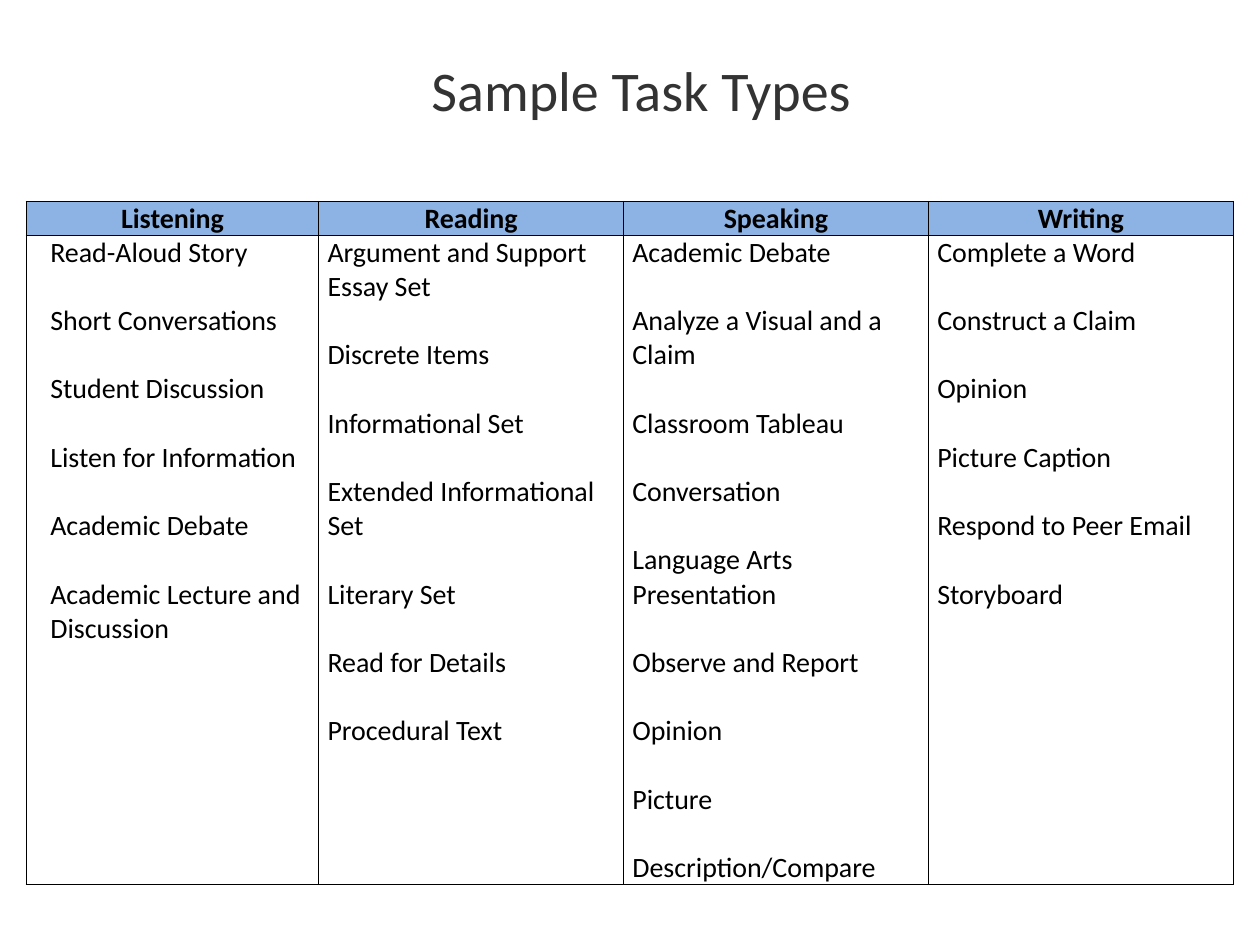
"""Build the slide of sample task types, one table column per language skill."""
from lxml import etree
from pptx import Presentation
from pptx.dml.color import RGBColor
from pptx.enum.text import MSO_ANCHOR, PP_ALIGN
from pptx.oxml.ns import qn
from pptx.util import Inches, Pt

CENTER, LEFT = PP_ALIGN.CENTER, PP_ALIGN.LEFT
MIDDLE = MSO_ANCHOR.MIDDLE

TASKS = {
    "Listening": ["Read-Aloud Story", "Short Conversations", "Student Discussion",
                  "Listen for Information", "Academic Debate",
                  "Academic Lecture and Discussion"],
    "Reading": ["Argument and Support Essay Set", "Discrete Items",
                "Informational Set", "Extended Informational Set",
                "Literary Set", "Read for Details", "Procedural Text"],
    "Speaking": ["Academic Debate", "Analyze a Visual and a Claim",
                 "Classroom Tableau", "Conversation",
                 "Language Arts Presentation", "Observe and Report",
                 "Opinion", "Picture", "Description/Compare"],
    "Writing": ["Complete a Word", "Construct a Claim", "Opinion",
                "Picture Caption", "Respond to Peer Email", "Storyboard"],
}
WIDTHS = [2.32, 2.42, 2.42, 2.42]


def color(code):
    return RGBColor.from_string(code)


def write(frame, lines, size, ink, align, bold=False):
    for i, line in enumerate(lines):
        para = frame.add_paragraph() if i else frame.paragraphs[0]
        para.text = line
        para.alignment = align
        if i:
            para.space_before = Pt(19.5)
        font = para.font
        font.name, font.size, font.bold = "Calibri", Pt(size), bold
        font.color.rgb = color(ink)


deck = Presentation()
deck.slide_width, deck.slide_height = Inches(10), Inches(7.5)
slide = deck.slides.add_slide(deck.slide_layouts[6])

title = slide.shapes.add_textbox(Inches(0.09), Inches(0), Inches(10), Inches(1.42))
title.text_frame.word_wrap = True
title.text_frame.vertical_anchor = MIDDLE
write(title.text_frame, ["Sample Task Types"], 32, "333333", CENTER)

table = slide.shapes.add_table(2, len(TASKS), Inches(0.21), Inches(1.6),
                               Inches(sum(WIDTHS)), Inches(5.42)).table
table.first_row = table.horz_banding = False
table.rows[0].height, table.rows[1].height = Inches(0.27), Inches(5.15)

for col, (skill, tasks) in enumerate(TASKS.items()):
    table.columns[col].width = Inches(WIDTHS[col])
    head, body = table.cell(0, col), table.cell(1, col)
    for cell in (head, body):
        cell.margin_left = cell.margin_right = Inches(0.07)
        cell.margin_top = cell.margin_bottom = Inches(0)
        props = cell._tc.get_or_add_tcPr()
        for side in ("a:lnL", "a:lnR", "a:lnT", "a:lnB"):
            line = etree.SubElement(props, qn(side), w=str(Pt(1)))
            fill = etree.SubElement(line, qn("a:solidFill"))
            etree.SubElement(fill, qn("a:srgbClr"), val="000000")
    head.fill.solid()
    head.fill.fore_color.rgb = color("8CB3E3")
    body.fill.background()
    write(head.text_frame, [skill], 16, "000000", CENTER, True)
    write(body.text_frame, tasks, 16, "000000", LEFT)

table.cell(1, 0).margin_left = Inches(0.19)

deck.save("out.pptx")
